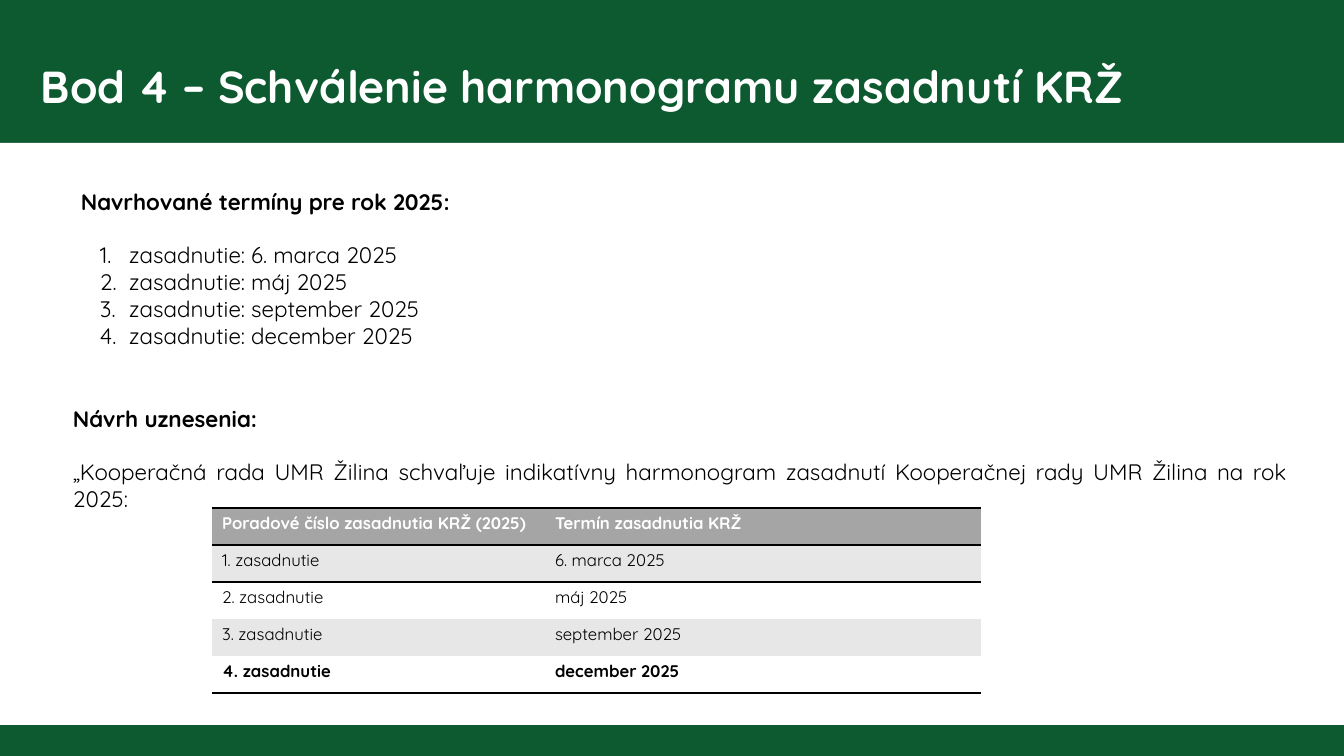
from pptx import Presentation
from pptx.dml.color import RGBColor
from pptx.enum.shapes import MSO_SHAPE as SHAPE
from pptx.enum.text import MSO_ANCHOR as ANCHOR, PP_ALIGN as ALIGN
from pptx.oxml import parse_xml
from pptx.oxml.ns import nsdecls, qn
from pptx.util import Pt

PX = 914400 / 100.8
GREEN = RGBColor(0x0E, 0x5A, 0x30)
WHITE = RGBColor(0xFF, 0xFF, 0xFF)
BLACK = RGBColor(0x00, 0x00, 0x00)
HEADER_GRAY = RGBColor(0xA5, 0xA5, 0xA5)
BAND_GRAY = RGBColor(0xE7, 0xE7, 0xE7)
NO_TABLE_STYLE = "{2D5ABB26-0587-4C30-8999-92F81FD0307C}"


def px(*lengths):
    return [round(length * PX) for length in lengths]


def write(frame, text, size=16, bold=False, color=BLACK, align=ALIGN.LEFT, before=0):
    """Fill the empty first paragraph of the frame, or add another one."""
    last = frame.paragraphs[-1]
    paragraph = frame.add_paragraph() if last.runs else last
    paragraph.alignment = align
    paragraph.space_before = Pt(before)
    run = paragraph.add_run()
    run.text = text
    run.font.name = "Quicksand"
    run.font.size = Pt(size)
    run.font.bold = bold
    run.font.color.rgb = color
    return paragraph


prs = Presentation()
prs.slide_width, prs.slide_height = px(1344, 756)
slide = prs.slides.add_slide(prs.slide_layouts[6])
shapes = slide.shapes

# Green ground with a white content panel
for box, color in (((0, 0, 1344, 756), GREEN), ((0, 143, 1344, 582), WHITE)):
    panel = shapes.add_shape(SHAPE.RECTANGLE, *px(*box))
    panel.shadow.inherit = False
    panel.fill.solid()
    panel.fill.fore_color.rgb = color
    panel.line.fill.background()

# Title
title = shapes.add_textbox(*px(31, 0, 1233, 141)).text_frame
title.word_wrap = True
title.vertical_anchor = ANCHOR.BOTTOM
title.margin_bottom = px(29)[0]
write(title, "Bod 4 – Schválenie harmonogramu zasadnutí KRŽ", size=32, bold=True, color=WHITE)

# Draft resolution
resolution = shapes.add_textbox(*px(63, 377, 1234, 217)).text_frame
resolution.word_wrap = True
resolution.margin_top = px(28)[0]
write(resolution, "Návrh uznesenia:", bold=True)
write(resolution, "„Kooperačná rada UMR Žilina schvaľuje indikatívny harmonogram zasadnutí "
      "Kooperačnej rady UMR Žilina na rok 2025:", align=ALIGN.JUSTIFY, before=19)

# Proposed dates as a numbered list
dates = ["6. marca 2025", "máj 2025", "september 2025", "december 2025"]
proposal = shapes.add_textbox(*px(71, 183, 1095, 173)).text_frame
proposal.word_wrap = True
write(proposal, "Navrhované termíny pre rok 2025:", bold=True)
for index, date in enumerate(dates):
    item = write(proposal, f"zasadnutie: {date}", before=0 if index else 19)
    properties = item._p.get_or_add_pPr()
    indent, hanging = px(48, -29)
    properties.set("marL", str(indent))
    properties.set("indent", str(hanging))
    properties.append(parse_xml(f'<a:buAutoNum {nsdecls("a")} type="arabicPeriod"/>'))

# Schedule table
rows = [("Poradové číslo zasadnutia KRŽ (2025)", "Termín zasadnutia KRŽ")]
rows += [(f"{number}. zasadnutie", date) for number, date in enumerate(dates, 1)]
last_row = len(rows) - 1
schedule = shapes.add_table(len(rows), 2, *px(212, 508, 769, 37 * len(rows))).table
schedule.first_row = schedule.horz_banding = False
schedule._tbl.tblPr.find(qn("a:tableStyleId")).text = NO_TABLE_STYLE
for column, width in zip(schedule.columns, px(333, 436)):
    column.width = width

for r, row in enumerate(rows):
    schedule.rows[r].height = px(37)[0]
    for c, text in enumerate(row):
        cell = schedule.cell(r, c)
        write(cell.text_frame, text, size=12, bold=r in (0, last_row),
              color=BLACK if r else WHITE)
        cell.fill.solid()
        cell.fill.fore_color.rgb = HEADER_GRAY if r == 0 else BAND_GRAY if r % 2 else WHITE
        edges = {0: ["lnT", "lnB"], 1: ["lnT"], last_row: ["lnB"]}.get(r, [])
        for place, edge in enumerate(edges):
            cell._tc.get_or_add_tcPr().insert(place, parse_xml(
                f'<a:{edge} {nsdecls("a")} w="{Pt(2)}"><a:solidFill>'
                f'<a:srgbClr val="{BLACK}"/></a:solidFill></a:{edge}>'))

prs.save("out.pptx")
